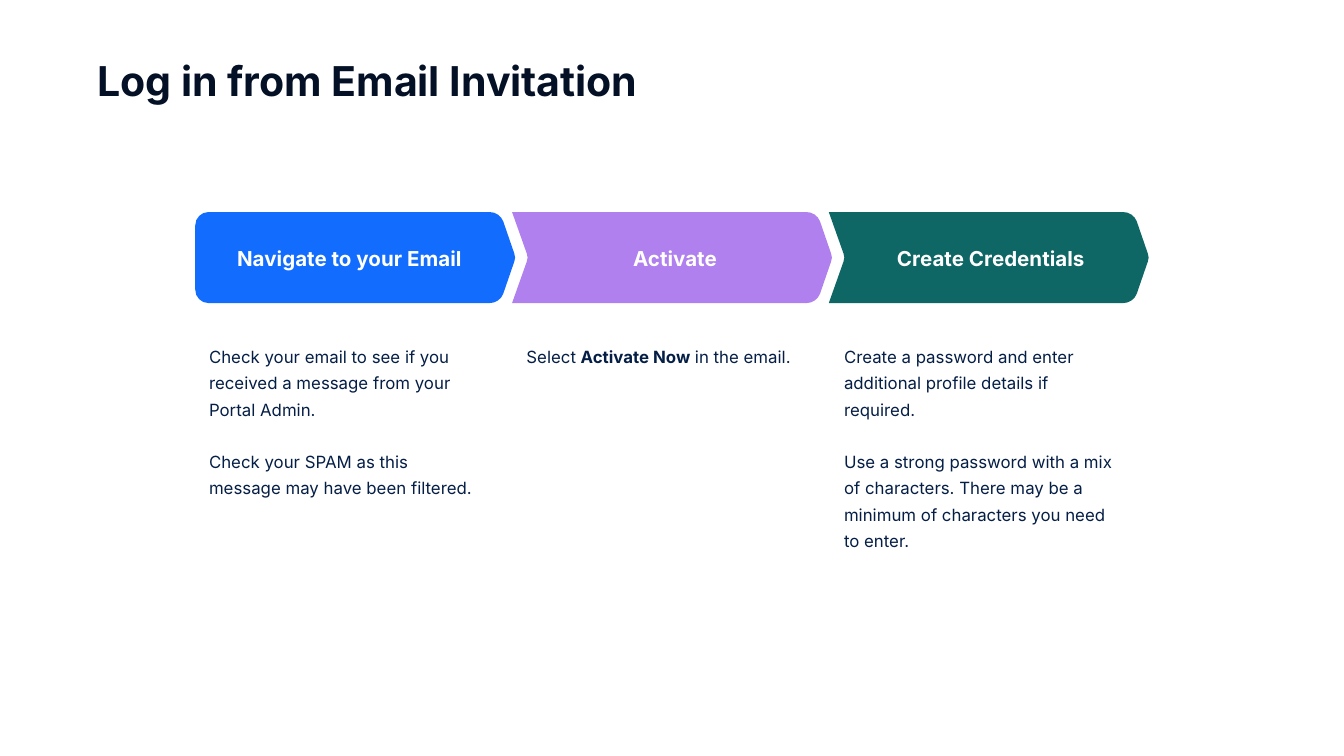
from pptx import Presentation
from pptx.dml.color import RGBColor
from pptx.enum.text import MSO_ANCHOR, PP_ALIGN
from pptx.util import Pt

CENTER = PP_ALIGN.CENTER
TOP, MIDDLE = MSO_ANCHOR.TOP, MSO_ANCHOR.MIDDLE
FONT = "Inter"
COLORS = {
    "title": "031025", "body": "051E46", "label": "FFFFFF",
    "blue": "126DFE", "purple": "B080EF", "teal": "0E6765",
}
ARROW_LEFT, ARROW_TOP, ARROW_HEIGHT, ARROW_STEP = 104.6, 113.6, 48.8, 169.7
BODY_LEFT, BODY_STEP = 104.9, 170.1
STEPS = [
    ("Navigate to your Email", 113.8, "blue", [
        [("Check your email to see if you received a message from your Portal Admin.", False)],
        [("Check your SPAM as this message may have been filtered.", False)],
    ]),
    ("Activate", 288.2, "purple", [
        [("Select ", False), ("Activate Now", True), (" in the email.", False)],
    ]),
    ("Create Credentials", 457.4, "teal", [
        [("Create a password and enter additional profile details if required.", False)],
        [("Use a strong password with a mix of characters. "
          "There may be a minimum of characters you need to enter.", False)],
    ]),
]


def rgb(name):
    """Return the named colour."""
    return RGBColor.from_string(COLORS[name])


def curve(a, b, c, d, n=4):
    """Return points along a cubic Bezier curve."""
    ts = [i / n for i in range(n + 1)]
    return [tuple((1 - t) ** 3 * p + 3 * (1 - t) ** 2 * t * q
                  + 3 * (1 - t) * t ** 2 * u + t ** 3 * v
                  for p, q, u, v in zip(a, b, c, d)) for t in ts]


def mirror(points):
    """Return the points reflected top to bottom, in reverse order."""
    return [(x, ARROW_HEIGHT - y) for x, y in reversed(points)]


def tip(x):
    """Return the rounded point of a chevron edge, from top to bottom."""
    return curve((x, 22.2), (x + 0.6, 23.6), (x + 0.6, 25.2), (x, 26.6), n=2)


def add_arrow(s, left, color, notched):
    """Add a step arrow with a rounded or notched left side."""
    shoulder = curve((157.5, 0), (161, 0), (163.8, 2), (165, 5))
    corner = curve((0, 7.2), (0, 3.2), (3.2, 0), (7.2, 0))
    if notched:
        start = [(0, ARROW_HEIGHT)] + tip(7.9)[::-1] + [(0, 0)]
    else:
        start = mirror(corner) + corner
    outline = start + shoulder + tip(170.9) + mirror(shoulder)
    points = [(Pt(left + x), Pt(ARROW_TOP + y)) for x, y in outline]
    fb = s.shapes.build_freeform(*points[0])
    fb.add_line_segments(points[1:], close=True)
    sp = fb.convert_to_shape()
    sp.shadow.inherit = False
    sp.fill.solid()
    sp.fill.fore_color.rgb = rgb(color)
    sp.line.fill.background()


def add_text(s, box, paragraphs, size, color, inset=7.2, anchor=TOP,
             align=None, spacing=None, gap=0):
    """Add a text box whose paragraphs are lists of (text, bold) runs."""
    tf = s.shapes.add_textbox(*map(Pt, box)).text_frame
    tf.word_wrap = True
    tf.vertical_anchor = anchor
    tf.margin_left = tf.margin_right = Pt(inset)
    tf.margin_top = tf.margin_bottom = Pt(inset)
    for i, runs in enumerate(paragraphs):
        p = tf.add_paragraph() if i else tf.paragraphs[0]
        p.alignment = align
        p.line_spacing = spacing
        if i:
            p.space_before = Pt(gap)
        for text, bold in runs:
            r = p.add_run()
            r.text = text
            r.font.name = FONT
            r.font.size = Pt(size)
            r.font.bold = bold
            r.font.color.rgb = rgb(color)


def main():
    """Build the slide and save it."""
    prs = Presentation()
    prs.slide_width, prs.slide_height = Pt(720), Pt(405)
    s = prs.slides.add_slide(prs.slide_layouts[6])
    add_text(s, (52.2, 32.8, 651.6, 23.8), [[("Log in from Email Invitation", True)]],
             22, "title", inset=0, spacing=0.9)
    for i, (label, label_left, color, paragraphs) in enumerate(STEPS):
        add_arrow(s, ARROW_LEFT + i * ARROW_STEP, color, notched=i > 0)
        add_text(s, (BODY_LEFT + i * BODY_STEP, 175.4, 160.6, 115.9), paragraphs,
                 9, "body", spacing=1.3, gap=14)
        add_text(s, (label_left, 126.4, 146.9, 23.8), [[(label, True)]], 11, "label",
                 anchor=MIDDLE, align=CENTER)
    prs.save("out.pptx")


if __name__ == "__main__":
    main()
